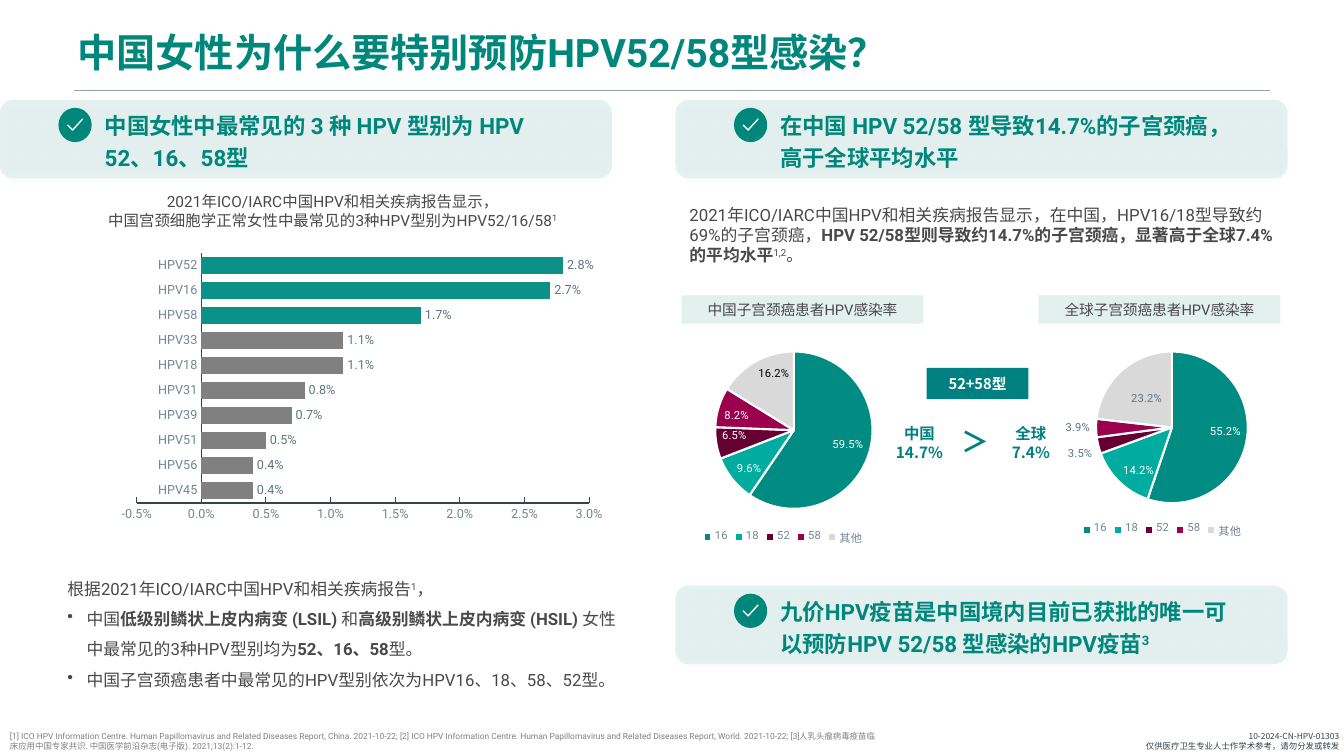
import pptx
import pptx.chart.data
import pptx.dml.color
import pptx.enum.chart
import pptx.enum.shapes
import pptx.enum.text
import pptx.oxml
import pptx.util
from lxml import etree

Inches, Pt = pptx.util.Inches, pptx.util.Pt
SHAPE = pptx.enum.shapes.MSO_SHAPE
ANCHOR = pptx.enum.text.MSO_ANCHOR
XL = pptx.enum.chart
LABEL = XL.XL_LABEL_POSITION
ALIGN = {"l": pptx.enum.text.PP_ALIGN.LEFT, "c": pptx.enum.text.PP_ALIGN.CENTER,
         "r": pptx.enum.text.PP_ALIGN.RIGHT}
A = "http://schemas.openxmlformats.org/drawingml/2006/main"
C = "http://schemas.openxmlformats.org/drawingml/2006/chart"
LATIN, CJK = "Roboto", "Noto Sans CJK SC"
GREEN, TEAL, GREY, AXIS = "00877B", "008080", "494949", "718695"

BANNERS = [
    (0, 0.99, [("中国女性中最常见的 3 种 HPV 型别为 HPV 52、16、58型", "b")]),
    (6.7, 0.99, [("在中国 HPV 52/58 型导致14.7%的子宫颈癌，高于全球平均水平", "b")]),
    (6.7, 5.81, [("九价HPV疫苗是中国境内目前已获批的唯一可以预防HPV 52/58 型感染的HPV疫苗", "b"),
                 ("3", "bs")]),
]
TEXTS = [
    ((0.67, 0.2, 12.67, 0.69), [[("中国女性为什么要特别预防HPV52/58型感染？", "b")]],
     dict(size=28, color=GREEN, spacing=0.9, anchor=ANCHOR.MIDDLE)),
    ((10.15, 7.2, 3.23, 0.3),
     [[("10-2024-CN-HPV-01303", "")], [("仅供医疗卫生专业人士作学术参考，请勿分发或转发", "")]],
     dict(size=6, color="37424A", font=CJK, align="r")),
    ((0, 7.2, 8.85, 0.3),
     [[("[1] ICO HPV Information Centre. Human Papillomavirus and Related Diseases Report, China. "
        "2021-10-22; [2] ICO HPV Information Centre. Human Papillomavirus and Related Diseases "
        "Report, World. 2021-10-22; [3]人乳头瘤病毒疫苗临床应用中国专家共识. "
        "中国医学前沿杂志(电子版). 2021;13(2):1-12.", "")]],
     dict(size=6, color="808080", anchor=ANCHOR.BOTTOM)),
    ((0.57, 5.59, 5.78, 1.28),
     [[("根据2021年ICO/IARC中国HPV和相关疾病报告", ""), ("1", "s"), ("，", "")],
      [("中国", ""), ("低级别鳞状上皮内病变 (LSIL) ", "b"), ("和", ""),
       ("高级别鳞状上皮内病变 (HSIL) ", "b"), ("女性中最常见的3种HPV型别均为", ""),
       ("52、16、58", "b"), ("型。", "")],
      [("中国子宫颈癌患者中最常见的HPV型别依次为HPV16、18、58、52型。", "")]],
     dict(size=12, spacing=1.5, bullets_from=1)),
    ((0.88, 1.86, 4.84, 0.47),
     [[("2021年ICO/IARC中国HPV和相关疾病报告显示，", "")],
      [("中国宫颈细胞学正常女性中最常见的3种HPV型别为HPV52/16/58", ""), ("1", "s")]],
     dict(size=11, align="c")),
    ((6.74, 1.98, 6.03, 0.71),
     [[("2021年ICO/IARC中国HPV和相关疾病报告显示，在中国，HPV16/18型导致约69%的子宫颈癌，", ""),
       ("HPV 52/58型则导致约14.7%的子宫颈癌，显著高于全球7.4%的平均水平", "b"),
       ("1,2", "s"), ("。", "")]], dict(size=12)),
    ((8.72, 4.16, 0.8, 0.47), [[("中国", "b")], [("14.7%", "b")]],
     dict(size=11, color=TEAL, font=CJK, align="c")),
    ((9.84, 4.16, 0.77, 0.47), [[("全球", "b")], [("7.4%", "b")]],
     dict(size=11, color=TEAL, font=CJK, align="c")),
    ((9.44, 4.16, 0.58, 0.45), [[("＞", "b")]], dict(size=20, color=TEAL, font=CJK)),
]
LABEL_BOXES = [
    ((6.76, 2.93, 2.4, 0.28), "E3F0ED", ("中国子宫颈癌患者HPV感染率", ""), dict()),
    ((10.3, 2.93, 2.4, 0.28), "E3F0ED", ("全球子宫颈癌患者HPV感染率", ""), dict()),
    ((9.19, 3.65, 1.01, 0.31), TEAL, ("52+58型", "b"), dict(color="FFFFFF", font=CJK)),
]
PREVALENCE = {"HPV45": 0.004, "HPV56": 0.004, "HPV51": 0.005, "HPV39": 0.007, "HPV31": 0.008,
              "HPV18": 0.011, "HPV33": 0.011, "HPV58": 0.017, "HPV16": 0.027, "HPV52": 0.028}
TOP_TYPES = ("HPV52", "HPV16", "HPV58")
PIE_TYPES = ["16", "18", "52", "58", "其他"]
PIE_COLORS = ["008C82", "00ACA0", "660033", "9A004D", "D9D9D9"]
IN, OUT, MID = LABEL.INSIDE_END, LABEL.OUTSIDE_END, LABEL.CENTER
PIES = [
    ((10.19, 3.23, 2.68, 2.15), [0.552, 0.142, 0.035, 0.039, 0.232],
     ["FFFFFF", "FFFFFF", "607381", "607381", "607381"], [IN, IN, OUT, OUT, MID]),
    ((6.28, 3.22, 2.98, 2.23), [0.595, 0.096, 0.065, 0.082, 0.162],
     ["FFFFFF", "FFFFFF", "FFFFFF", "FFFFFF", "000000"], [IN] * 5),
]


def rgb(value):
    return pptx.dml.color.RGBColor.from_string(value)


def box(at):
    return [Inches(v) for v in at]


def style(font, size, color, name=LATIN, bold=False):
    for key, value in dict(size=Pt(size), name=name, bold=bold).items():
        setattr(font, key, value)
    font.color.rgb = rgb(color)


def write(sp, paragraphs, size, color=GREY, font=LATIN, align="l", spacing=1.0,
          anchor=ANCHOR.TOP, bullets_from=99):
    tf = sp.text_frame
    for key, value in dict(word_wrap=True, vertical_anchor=anchor).items():
        setattr(tf, key, value)
    for i, runs in enumerate(paragraphs):
        p = tf.paragraphs[0] if i == 0 else tf.add_paragraph()
        p.alignment, p.line_spacing = ALIGN[align], spacing
        if i >= bullets_from:
            pPr = p._p.get_or_add_pPr()
            pPr.set("marL", str(Inches(0.19)))
            pPr.set("indent", str(-Inches(0.19)))
            etree.SubElement(pPr, f"{{{A}}}buChar", char="•")
        for text, marks in runs:
            r = p.add_run()
            r.text = text
            style(r.font, size, color, font, "b" in marks)
            rPr = r._r.get_or_add_rPr()
            etree.SubElement(rPr, f"{{{A}}}ea", typeface=CJK)
            if "s" in marks:
                rPr.set("baseline", "30000")


def add_shape(s, kind, at, fill):
    sp = s.shapes.add_shape(kind, *box(at))
    sp.shadow.inherit = False
    sp.fill.solid()
    sp.fill.fore_color.rgb = rgb(fill)
    sp.line.fill.background()
    return sp


def add_banner(s, x, y, runs):
    sp = add_shape(s, SHAPE.ROUNDED_RECTANGLE, (x, y, 6.07, 0.78), GREEN)
    color = sp._element.spPr.find(f"{{{A}}}solidFill")[0]
    etree.SubElement(color, f"{{{A}}}alpha", val="9000")
    sp._element.spPr.find(f"{{{A}}}effectLst").append(pptx.oxml.parse_xml(
        f'<a:outerShdw xmlns:a="{A}" blurRad="76200" dir="13500000"><a:srgbClr val="000000">'
        '<a:alpha val="20000"/></a:srgbClr></a:outerShdw>'))
    add_shape(s, SHAPE.OVAL, (x + 0.58, y + 0.08, 0.33, 0.34), GREEN)
    tick = s.shapes.build_freeform(Inches(x + 0.82), Inches(y + 0.19))
    tick.add_line_segments([box((x + 0.72, y + 0.3)), box((x + 0.67, y + 0.25))], close=False)
    sp = tick.convert_to_shape()
    sp.shadow.inherit = False
    sp.fill.background()
    sp.line.color.rgb, sp.line.width = rgb("FFFFFF"), Pt(1)
    write(s.shapes.add_textbox(*box((x + 0.94, y + 0.03, 4.78, 0.72))), [runs], 16,
          GREEN, spacing=1.2, anchor=ANCHOR.MIDDLE)


def add_chart(s, kind, at, cats, vals, colors, plot_area, size):
    data = pptx.chart.data.CategoryChartData(number_format="0.0%")
    data.categories = cats
    data.add_series("Series 1", vals)
    chart = s.shapes.add_chart(kind, *box(at), data).chart
    chart.has_title = chart.has_legend = False
    style(chart.font, size, "37424A")
    plot = chart.plots[0]
    plot.vary_by_categories = kind == XL.XL_CHART_TYPE.PIE
    plot.has_data_labels = True
    labels = plot.data_labels
    for key, value in dict(show_value=True, show_percentage=False, number_format="0.0%",
                           number_format_is_linked=False).items():
        setattr(labels, key, value)
    style(labels.font, size, "607381")
    for i, color in enumerate(colors):
        fill = plot.series[0].points[i].format.fill
        fill.solid()
        fill.fore_color.rgb = rgb(color)
    area = chart._chartSpace.chart.plotArea
    for old in area.findall(f"{{{C}}}layout"):
        area.remove(old)
    parts = "".join(f'<c:{k} val="{v}"/>' for k, v in zip("xywh", plot_area))
    area.insert(0, pptx.oxml.parse_xml(
        f'<c:layout xmlns:c="{C}"><c:manualLayout><c:layoutTarget val="inner"/>'
        f'<c:xMode val="edge"/><c:yMode val="edge"/>{parts}</c:manualLayout></c:layout>'))
    return chart, plot


def add_bars(s):
    colors = ["0B9187" if name in TOP_TYPES else "808080" for name in PREVALENCE]
    chart, plot = add_chart(s, XL.XL_CHART_TYPE.BAR_CLUSTERED, (0.57, 2.48, 5.61, 2.79),
                            list(PREVALENCE), list(PREVALENCE.values()), colors,
                            (0.14, 0.01, 0.8, 0.89), 9)
    plot.gap_width, plot.overlap = 48, 54
    plot.data_labels.position = OUT
    mark = XL.XL_TICK_MARK
    for axis, tick in ((chart.category_axis, mark.NONE), (chart.value_axis, mark.INSIDE)):
        for key, value in dict(has_major_gridlines=False, major_tick_mark=tick,
                               minor_tick_mark=mark.NONE).items():
            setattr(axis, key, value)
        style(axis.tick_labels.font, 9, AXIS)
        axis.format.line.color.rgb, axis.format.line.width = rgb("37424A"), Pt(0.75)
    for key, value in dict(minimum_scale=-0.005, maximum_scale=0.03, major_unit=0.005).items():
        setattr(chart.value_axis, key, value)
    chart.value_axis.tick_labels.number_format = "0.0%"
    chart.value_axis.tick_labels.number_format_is_linked = False


def add_pie(s, at, vals, label_colors, positions):
    chart, plot = add_chart(s, XL.XL_CHART_TYPE.PIE, at, PIE_TYPES, vals, PIE_COLORS,
                            (0.1, 0.12, 0.87, 0.7), 8)
    chart.has_legend = True
    chart.legend.position = XL.XL_LEGEND_POSITION.BOTTOM
    chart.legend.include_in_layout = False
    style(chart.legend.font, 8, AXIS)
    for i, (color, position) in enumerate(zip(label_colors, positions)):
        point = plot.series[0].points[i]
        point.format.line.color.rgb, point.format.line.width = rgb("FFFFFF"), Pt(1.5)
        style(point.data_label.font, 8, color)
        point.data_label.position = position


def main():
    prs = pptx.Presentation()
    prs.slide_width, prs.slide_height = Inches(13.33), Inches(7.5)
    s = prs.slides.add_slide(prs.slide_layouts[6])
    rule = s.shapes.add_connector(pptx.enum.shapes.MSO_CONNECTOR.STRAIGHT,
                                  *box((0.73, 0.89, 12.6, 0.89)))
    rule.line.color.rgb, rule.line.width = rgb("92A2AE"), Pt(0.25)
    etree.SubElement(rule._element.spPr, f"{{{A}}}effectLst")
    for banner in BANNERS:
        add_banner(s, *banner)
    add_bars(s)
    for pie in PIES:
        add_pie(s, *pie)
    for at, fill, run, look in LABEL_BOXES:
        write(add_shape(s, SHAPE.RECTANGLE, at, fill), [[run]], 10.5, align="c",
              anchor=ANCHOR.MIDDLE, **look)
    for at, paragraphs, look in TEXTS:
        write(s.shapes.add_textbox(*box(at)), paragraphs, **look)
    prs.save("out.pptx")


if __name__ == "__main__":
    main()
